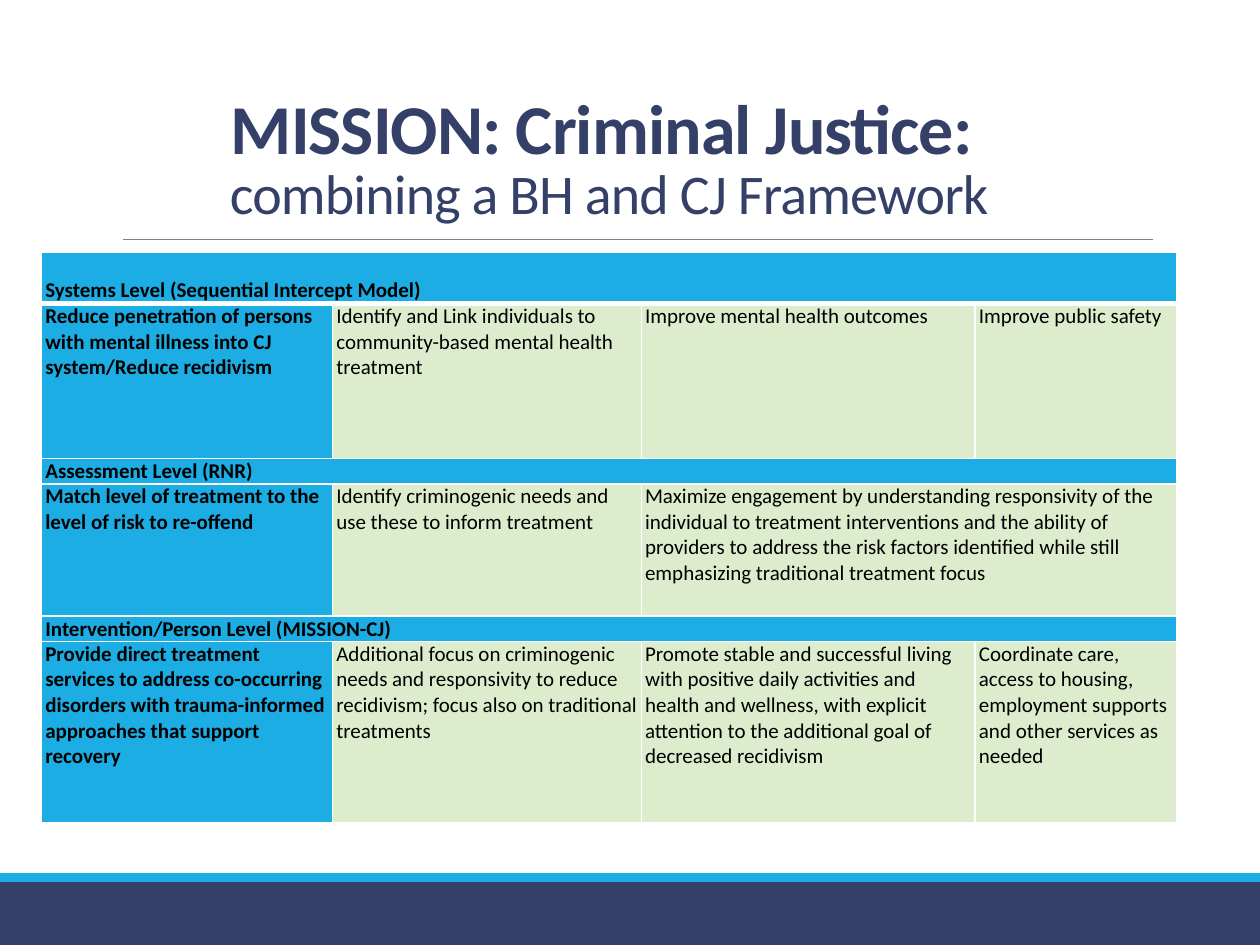
from lxml.etree import SubElement
from pptx import Presentation
from pptx.dml.color import RGBColor
from pptx.enum.shapes import MSO_CONNECTOR, MSO_SHAPE
from pptx.enum.text import MSO_ANCHOR, PP_ALIGN
from pptx.oxml import parse_xml
from pptx.oxml.ns import nsdecls, qn
from pptx.util import Inches, Pt

WIDTH, HEIGHT = 10, 7.5
NAVY, BLUE, GREEN = "344068", "1CADE4", "DEECCE"
BLACK, WHITE, GREY = "000000", "FFFFFF", "808080"
FONT = "Calibri"

COLUMN_WIDTHS = [2.31, 2.45, 2.65, 1.6]
ROW_HEIGHTS = [0.41, 1.23, 0.2, 1.05, 0.2, 1.44]
# The last cell of a short row spans the remaining columns
ROWS = [
    ["Systems Level (Sequential Intercept Model)"],
    ["Reduce penetration of persons with mental illness into CJ system/Reduce recidivism",
     "Identify and Link individuals to community-based mental health treatment",
     "Improve mental health outcomes",
     "Improve public safety"],
    ["Assessment Level (RNR)"],
    ["Match level of treatment to the level of risk to re-offend",
     "Identify criminogenic needs and use these to inform treatment",
     "Maximize engagement by understanding responsivity of the individual to treatment "
     "interventions and the ability of providers to address the risk factors identified "
     "while still emphasizing traditional treatment focus"],
    ["Intervention/Person Level (MISSION-CJ)"],
    ["Provide direct treatment services to address co-occurring disorders with "
     "trauma-informed approaches that support recovery",
     "Additional focus on criminogenic needs and responsivity to reduce recidivism; "
     "focus also on traditional treatments",
     "Promote stable and successful living with positive daily activities and health and "
     "wellness, with explicit attention to the additional goal of decreased recidivism",
     "Coordinate care, access to housing, employment supports and other services as needed"],
]


def color(hex_string):
    return RGBColor.from_string(hex_string)


def style_run(run, size, hex_string, bold):
    run.font.name = FONT
    run.font.size = Pt(size)
    run.font.bold = bold
    run.font.color.rgb = color(hex_string)


def add_band(slide, top, height, fill):
    """Full-width colour band."""
    band = slide.shapes.add_shape(
        MSO_SHAPE.RECTANGLE, 0, Inches(top), Inches(WIDTH), Inches(height))
    band.shadow.inherit = False
    band.fill.solid()
    band.fill.fore_color.rgb = color(fill)
    band.line.fill.background()


def add_rule(slide, left, right, top):
    rule = slide.shapes.add_connector(
        MSO_CONNECTOR.STRAIGHT, Inches(left), Inches(top), Inches(right), Inches(top))
    rule.line.color.rgb = color(GREY)
    rule.line.width = Pt(0.5)
    SubElement(rule._element.spPr, qn("a:effectLst"))


def add_title(slide):
    box = slide.shapes.add_textbox(Inches(0.71), Inches(0.25), Inches(8.25), Inches(1.59))
    frame = box.text_frame
    frame.word_wrap = True
    frame.vertical_anchor = MSO_ANCHOR.BOTTOM
    paragraph = frame.paragraphs[0]
    paragraph.text = "MISSION: Criminal Justice: \vcombining a BH and CJ Framework"
    paragraph.alignment = PP_ALIGN.CENTER
    paragraph.line_spacing = 0.85
    for run, size, bold in zip(paragraph.runs, (40, 32), (True, False)):
        style_run(run, size, NAVY, bold)
        run.font._element.set("spc", "-50")


def set_borders(cell, top, bottom):
    """White borders; the side lines are always 1 pt."""
    properties = cell._tc.get_or_add_tcPr()
    for index, (side, width) in enumerate(zip("LRTB", (1, 1, top, bottom))):
        properties.insert(index, parse_xml(
            f'<a:ln{side} {nsdecls("a")} w="{Pt(width)}"><a:solidFill>'
            f'<a:srgbClr val="{WHITE}"/></a:solidFill></a:ln{side}>'))


def format_cell(cell, row, column):
    is_heading = column == 0 or len(ROWS[row]) == 1
    cell.margin_left = cell.margin_right = Inches(0.03)
    cell.margin_top = cell.margin_bottom = 0
    cell.fill.solid()
    cell.fill.fore_color.rgb = color(BLUE if is_heading else GREEN)
    set_borders(cell, top=3 if row == 1 else 1, bottom=3 if row == 0 else 1)
    paragraph = cell.text_frame.paragraphs[0]
    paragraph.font.size = Pt(12)
    if row == 0:
        paragraph.line_spacing = 2.0
    for run in paragraph.runs:
        style_run(run, 12, BLACK, is_heading)


def add_framework_table(slide):
    frame = slide.shapes.add_table(
        len(ROWS), len(COLUMN_WIDTHS), Inches(0.33), Inches(2),
        Inches(sum(COLUMN_WIDTHS)), Inches(sum(ROW_HEIGHTS)))
    table = frame.table
    table.first_row = table.horz_banding = False
    for column, width in zip(table.columns, COLUMN_WIDTHS):
        column.width = Inches(width)
    for row, height in zip(table.rows, ROW_HEIGHTS):
        row.height = Inches(height)

    last_column = len(COLUMN_WIDTHS) - 1
    for row, texts in enumerate(ROWS):
        for column, text in enumerate(texts):
            table.cell(row, column).text_frame.text = text
        for column in range(last_column + 1):
            format_cell(table.cell(row, column), row, column)
        if len(texts) <= last_column:
            table.cell(row, len(texts) - 1).merge(table.cell(row, last_column))


def main():
    presentation = Presentation()
    presentation.slide_width = Inches(WIDTH)
    presentation.slide_height = Inches(HEIGHT)
    slide = presentation.slides.add_slide(presentation.slide_layouts[6])

    # Footer bands and the line under the title
    add_band(slide, 7, 0.5, NAVY)
    add_band(slide, 6.93, 0.07, BLUE)
    add_rule(slide, 0.98, 9.15, 1.9)

    # Content
    add_title(slide)
    add_framework_table(slide)
    presentation.save("out.pptx")


if __name__ == "__main__":
    main()
